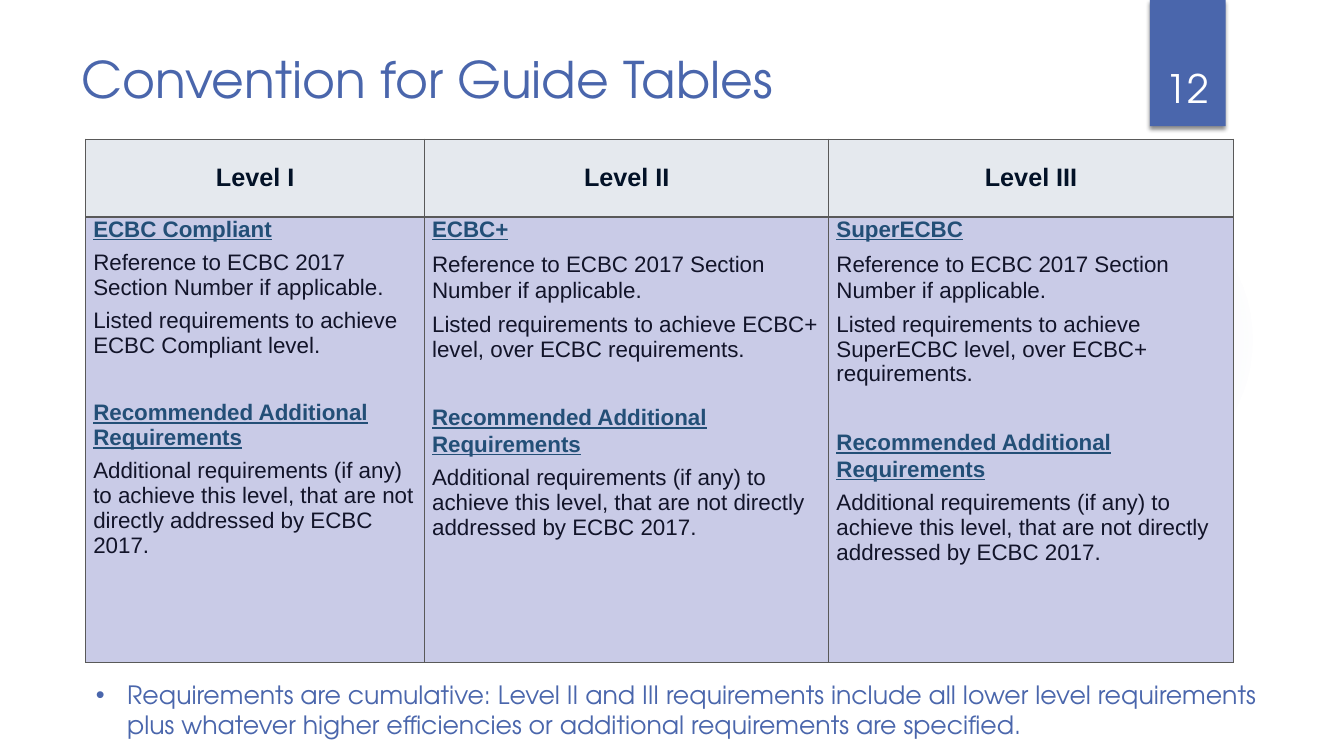
from lxml import etree
from pptx import Presentation
from pptx.dml.color import RGBColor
from pptx.enum.shapes import MSO_SHAPE
from pptx.enum.text import MSO_ANCHOR, MSO_AUTO_SIZE, PP_ALIGN
from pptx.oxml import parse_xml
from pptx.oxml.ns import nsdecls, qn
from pptx.util import Cm, Pt

TOP, MIDDLE, BOTTOM = MSO_ANCHOR.TOP, MSO_ANCHOR.MIDDLE, MSO_ANCHOR.BOTTOM
LEFT, CENTER = PP_ALIGN.LEFT, PP_ALIGN.CENTER
RECTANGLE, OVAL = MSO_SHAPE.RECTANGLE, MSO_SHAPE.OVAL
NO_AUTOFIT, GROW = MSO_AUTO_SIZE.NONE, MSO_AUTO_SIZE.SHAPE_TO_FIT_TEXT

BLUE = RGBColor(0x4A, 0x66, 0xAC)
WHITE = RGBColor(0xFF, 0xFF, 0xFF)
HEADER_TEXT = RGBColor(0x03, 0x12, 0x27)
HEADER_FILL = RGBColor(0xE5, 0xE9, 0xEE)
HEADING_TEXT = RGBColor(0x23, 0x4F, 0x77)
BODY_TEXT = RGBColor(0x12, 0x14, 0x29)
BODY_FILL = RGBColor(0xC9, 0xCB, 0xE7)
BORDER = RGBColor(0x59, 0x59, 0x59)
GLOW = RGBColor(0x5C, 0x64, 0xB7)

TITLE = "Convention for Guide Tables"
PAGE_NUMBER = "12"
NOTE = ("Requirements are cumulative: Level II and III requirements include all lower level "
        "requirements plus whatever higher efficiencies or additional requirements are specified.")
REFERENCE = "Reference to ECBC 2017 Section Number if applicable."
RECOMMENDED = "Recommended Additional Requirements"
ADDITIONAL = ("Additional requirements (if any) to achieve this level, "
              "that are not directly addressed by ECBC 2017.")
# column title, level name, listed requirements, line spacing, width in cm
LEVELS = [
    ("Level I", "ECBC Compliant",
     "Listed requirements to achieve ECBC Compliant level.", 1.0, 8.54),
    ("Level II", "ECBC+",
     "Listed requirements to achieve ECBC+ level, over ECBC requirements.", 1.07, 10.19),
    ("Level III", "SuperECBC",
     "Listed requirements to achieve SuperECBC level, over ECBC+ requirements.", 1.07, 10.19),
]
ROW_HEIGHTS = (1.96, 11.23)
GLOW_STOPS = [(0, 7), (36, 6), (69, 0)]  # position and opacity in percent

DISPLAY_FONT = {"name": "TeX Gyre Adventor", "color": BLUE, "bold": False}
TITLE_FONT = DISPLAY_FONT | {"size": Pt(36)}
NUMBER_FONT = DISPLAY_FONT | {"size": Pt(28), "color": WHITE}
NOTE_FONT = DISPLAY_FONT | {"size": Pt(18)}
HEADER_FONT = {"name": "Arial", "size": Pt(18), "color": HEADER_TEXT, "bold": True}
HEADING_FONT = {"name": "Arial", "size": Pt(16), "color": HEADING_TEXT,
                "bold": True, "underline": True}
BODY_FONT = {"name": "Arial", "size": Pt(16), "color": BODY_TEXT,
             "bold": False, "underline": False}


def place(shape, left, top, width, height):
    shape.left, shape.top, shape.width, shape.height = map(Cm, (left, top, width, height))


def write(paragraph, text, font, **layout):
    paragraph.text = text
    for name, value in font.items():
        if name == "color":
            paragraph.font.color.rgb = value
        else:
            setattr(paragraph.font, name, value)
    for name, value in layout.items():
        setattr(paragraph, name, value)


def add_plain_shape(slide, preset, *box):
    shape = slide.shapes.add_shape(preset, *map(Cm, box))
    shape.shadow.inherit = False
    shape.line.fill.background()
    return shape


def add_glow(slide):
    glow = add_plain_shape(slide, OVAL, 23.9, 4.65, 7.82, 7.82)
    stops = "".join(
        f'<a:gs pos="{position * 1000}"><a:srgbClr val="{GLOW}">'
        f'<a:alpha val="{opacity * 1000}"/></a:srgbClr></a:gs>'
        for position, opacity in GLOW_STOPS)
    gradient = parse_xml(
        f'<a:gradFill {nsdecls("a")}><a:gsLst>{stops}</a:gsLst><a:path path="circle">'
        '<a:fillToRect l="50000" t="50000" r="50000" b="50000"/></a:path></a:gradFill>')
    glow._element.spPr.find(qn("a:prstGeom")).addnext(gradient)


def add_page_badge(slide):
    badge = add_plain_shape(slide, RECTANGLE, 28.98, 0, 1.91, 3.18)
    badge.fill.solid()
    badge.fill.fore_color.rgb = BLUE
    badge._element.spPr.find(qn("a:effectLst")).append(parse_xml(
        f'<a:outerShdw {nsdecls("a")} blurRad="38100" dist="25400" dir="5400000" rotWithShape="0">'
        '<a:srgbClr val="000000"><a:alpha val="45000"/></a:srgbClr></a:outerShdw>'))
    number = slide.shapes.add_textbox(*map(Cm, (28.75, 0.81, 2.34, 2.13))).text_frame
    number.word_wrap = True
    number.vertical_anchor = BOTTOM
    write(number.paragraphs[0], PAGE_NUMBER, NUMBER_FONT, alignment=CENTER)


def format_cell(cell, fill, anchor):
    for side in ("L", "R", "T", "B"):
        cell._tc.get_or_add_tcPr().append(parse_xml(
            f'<a:ln{side} {nsdecls("a")} w="12700"><a:solidFill>'
            f'<a:srgbClr val="{BORDER}"/></a:solidFill></a:ln{side}>'))
    cell.fill.solid()
    cell.fill.fore_color.rgb = fill
    cell.vertical_anchor = anchor
    cell.margin_left = cell.margin_right = Cm(0.19)
    cell.margin_top = cell.margin_bottom = 0


def add_level_table(slide):
    width = sum(level[-1] for level in LEVELS)
    table = slide.shapes.add_table(2, len(LEVELS), Cm(2.16), Cm(3.51),
                                   Cm(width), Cm(sum(ROW_HEIGHTS))).table
    for row, height in zip(table.rows, ROW_HEIGHTS):
        row.height = Cm(height)
    for index, (title, name, listed, spacing, column_width) in enumerate(LEVELS):
        table.columns[index].width = Cm(column_width)
        header, body = table.cell(0, index), table.cell(1, index)
        format_cell(header, HEADER_FILL, MIDDLE)
        format_cell(body, BODY_FILL, TOP)
        write(header.text_frame.paragraphs[0], title, HEADER_FONT, alignment=CENTER)
        entries = [
            (name, HEADING_FONT, 0, 1.0),
            (REFERENCE, BODY_FONT, 6, spacing),
            (listed, BODY_FONT, 6, 1.0),
            (RECOMMENDED, HEADING_FONT, 30, spacing),
            (ADDITIONAL, BODY_FONT, 6, 1.0),
        ]
        frame = body.text_frame
        for position, (text, font, before, line_spacing) in enumerate(entries):
            paragraph = frame.add_paragraph() if position else frame.paragraphs[0]
            write(paragraph, text, font, alignment=LEFT,
                  space_before=Pt(before), line_spacing=line_spacing)


def fill_placeholders(slide):
    title, note = slide.placeholders[0], slide.placeholders[1]
    place(title, 1.8, 1.09, 26.14, 4.65)
    title.text_frame.vertical_anchor = TOP
    title.text_frame.auto_size = NO_AUTOFIT
    write(title.text_frame.paragraphs[0], TITLE, TITLE_FONT, alignment=LEFT)

    place(note, 2.16, 16.99, 30.48, 1.8)
    note.text_frame.auto_size = GROW
    paragraph = note.text_frame.paragraphs[0]
    properties = paragraph._p.get_or_add_pPr()
    properties.set("marL", str(Cm(0.79)))
    properties.set("indent", str(-Cm(0.79)))
    etree.SubElement(properties, qn("a:buFont")).set("typeface", "Arial")
    etree.SubElement(properties, qn("a:buChar")).set("char", "•")
    write(paragraph, NOTE, NOTE_FONT, alignment=LEFT, space_before=Pt(0))


def main():
    presentation = Presentation()
    presentation.slide_width, presentation.slide_height = Cm(33.87), Cm(19.05)
    slide = presentation.slides.add_slide(presentation.slide_layouts[1])
    fill_placeholders(slide)
    add_glow(slide)
    add_page_badge(slide)
    add_level_table(slide)
    presentation.save("out.pptx")


if __name__ == "__main__":
    main()
